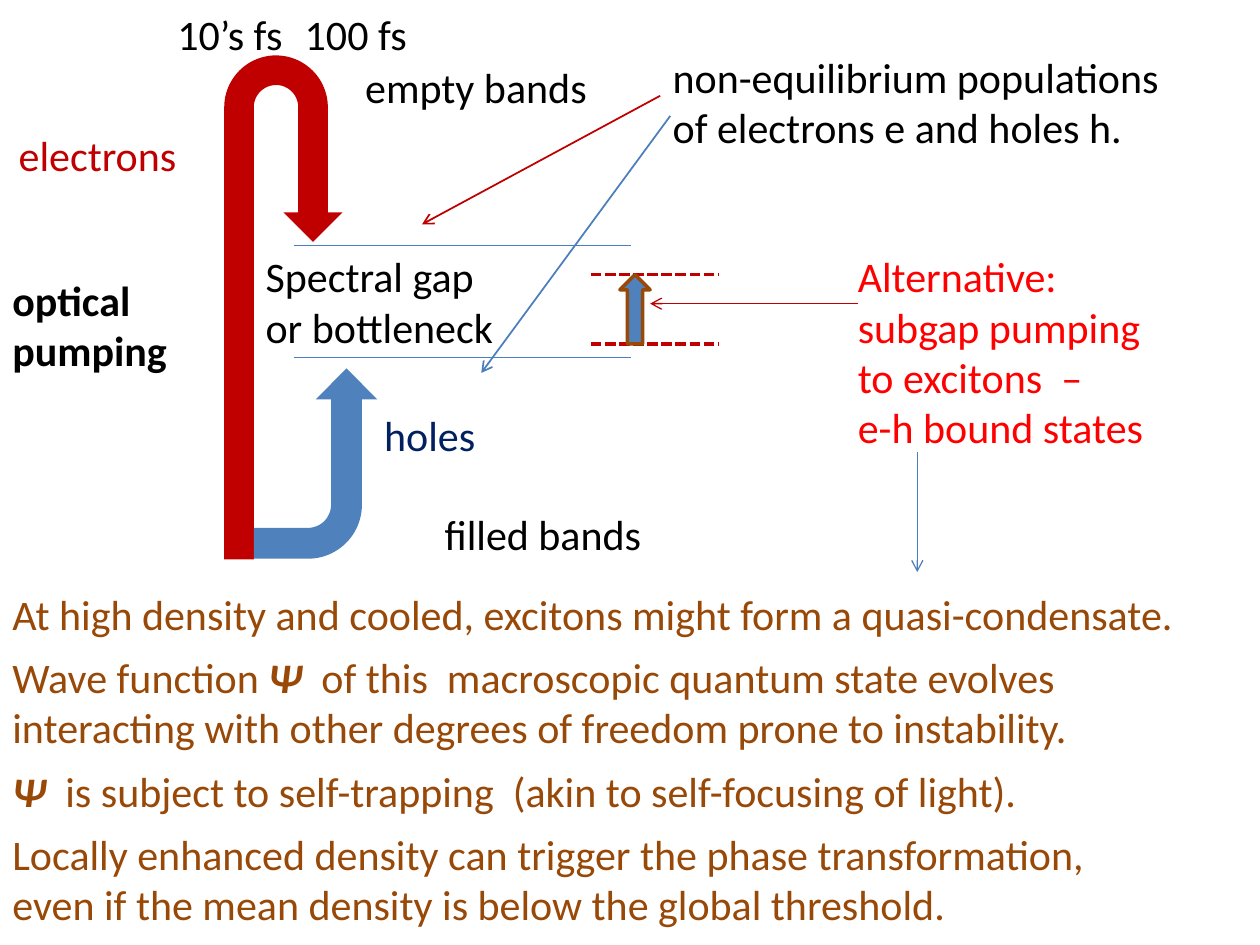
from lxml import etree
from pptx import Presentation
from pptx.dml.color import RGBColor
from pptx.enum.dml import MSO_LINE
from pptx.enum.shapes import MSO_CONNECTOR, MSO_SHAPE
from pptx.enum.text import MSO_AUTO_SIZE
from pptx.oxml.ns import qn
from pptx.util import Inches, Pt

STRAIGHT = MSO_CONNECTOR.STRAIGHT
DASH = MSO_LINE.SQUARE_DOT
UP, UTURN, BENT = MSO_SHAPE.UP_ARROW, MSO_SHAPE.U_TURN_ARROW, MSO_SHAPE.BENT_ARROW
FIT = MSO_AUTO_SIZE.SHAPE_TO_FIT_TEXT
BLACK, RED, BRIGHT_RED, NAVY = "000000", "C00000", "FF0000", "002060"
BLUE, LINE_BLUE, BROWN = "4F81BD", "4B7EBC", "984807"

CONCLUSIONS = [
    "At high density and cooled, excitons might form a quasi-condensate.",
    "Wave function |Ψ  |of this  macroscopic quantum state evolves \n"
    "interacting with other degrees of freedom prone to instability.",
    "Ψ  |is subject to self-trapping  (akin to self-focusing of light).",
    "Locally enhanced density can trigger the phase transformation, \n"
    "even if the mean density is below the global threshold.",
]
LABELS = [
    (["Alternative:\nsubgap pumping \nto excitons  –\ne-h bound states"],
     (6.71, 1.94, 2.54, 1.72), BRIGHT_RED),
    (["Spectral gap\nor bottleneck"], (2.01, 1.94, 2.03, 0.91), BLACK),
    (["electrons"], (0.05, 0.98, 1.57, 0.5), RED),
    (["holes"], (2.95, 3.2, 1.18, 0.5), NAVY),
    (["non-equilibrium populations \nof electrons e and holes h."],
     (5.24, 0.36, 4.18, 0.91), BLACK),
    (["empty bands"], (2.8, 0.44, 2.13, 0.5), BLACK),
    (["filled bands"], (3.43, 3.99, 1.91, 0.5), BLACK),
    (["10’s fs"], (1.31, 0.02, 1.04, 0.5), BLACK),
    (["100 fs"], (2.32, 0.02, 1.02, 0.5), BLACK),
]
BAND_EDGES = [1.95, 2.84]
EXCITON_LEVELS = [2.18, 2.73]
POINTERS = [
    ((7.28, 3.59), (7.28, 4.54), LINE_BLUE, 0.75),
    ((6.81, 2.41), (5.16, 2.41), RED, 0.75),
    ((5.24, 0.76), (3.35, 1.78), RED, 1),
    ((5.32, 0.92), (3.82, 2.96), LINE_BLUE, 1),
]


def color(value):
    return RGBColor.from_string(value)


def add_text(page, paragraphs, place, ink, bold=False, wrap=False, gap=0):
    box = page.shapes.add_textbox(*map(Inches, place))
    frame = box.text_frame
    frame.word_wrap, frame.auto_size = wrap, FIT
    for index, text in enumerate(paragraphs):
        para = frame.paragraphs[0] if index == 0 else frame.add_paragraph()
        para.space_before = Pt(gap if index else 0)
        for part in text.split("|"):
            symbol = part.startswith("Ψ")
            for row, words in enumerate(part.split("\n")):
                if row:
                    para.add_line_break()
                span = para.add_run()
                span.text = words
                span.font.name, span.font.size = "Calibri", Pt(24)
                span.font.color.rgb = color(ink)
                span.font.bold, span.font.italic = bold or symbol, symbol


def add_line(page, start, end, ink, width, dash=None, arrow=False):
    line = page.shapes.add_connector(STRAIGHT, *map(Inches, start + end))
    line.line.color.rgb, line.line.width = color(ink), Pt(width)
    if dash:
        line.line.dash_style = dash
    if arrow:
        etree.SubElement(line.line._get_or_add_ln(), qn("a:tailEnd"), type="arrow")
    etree.SubElement(line._element.spPr, qn("a:effectLst"))


def add_arrow(page, kind, place, fill, outline=None):
    arrow = page.shapes.add_shape(kind, *map(Inches, place))
    arrow.shadow.inherit = False
    arrow.fill.solid()
    arrow.fill.fore_color.rgb = color(fill)
    if outline:
        arrow.line.color.rgb, arrow.line.width = color(outline), Pt(2)
    else:
        arrow.line.fill.background()
    return arrow


def main():
    """Build the optical pumping slide."""
    deck = Presentation()
    deck.slide_width, deck.slide_height = Inches(10), Inches(7.5)
    page = deck.slides.add_slide(deck.slide_layouts[6])

    add_text(page, CONCLUSIONS, (0, 4.62, 10, 2.83), BROWN, wrap=True, gap=7.3)
    for level in EXCITON_LEVELS:
        add_line(page, (4.69, level), (5.71, level), RED, 2, dash=DASH)
    top, bottom = EXCITON_LEVELS
    add_arrow(page, UP, (4.92, top, 0.24, bottom - top), BLUE, outline=BROWN)
    for edge in BAND_EDGES:
        add_line(page, (2.33, edge), (5.01, edge), LINE_BLUE, 0.75)

    electrons = add_arrow(page, UTURN, (1.78, 0.44, 0.94, 4), RED)
    for index, value in enumerate([0.25, 0.25, 0.25, 0.44, 0.37]):
        electrons.adjustments[index] = value
    holes = add_arrow(page, BENT, (1.75, 3.19, 1.51, 0.98), BLUE)
    holes.rotation = 270
    holes._element.spPr.xfrm.set("flipV", "1")

    add_text(page, ["optical", "pumping"], (0, 2.13, 1.62, 0.91), BLACK, bold=True)
    for paragraphs, place, ink in LABELS:
        add_text(page, paragraphs, place, ink)
    for start, end, ink, width in POINTERS:
        add_line(page, start, end, ink, width, arrow=True)
    deck.save("out.pptx")


if __name__ == "__main__":
    main()
